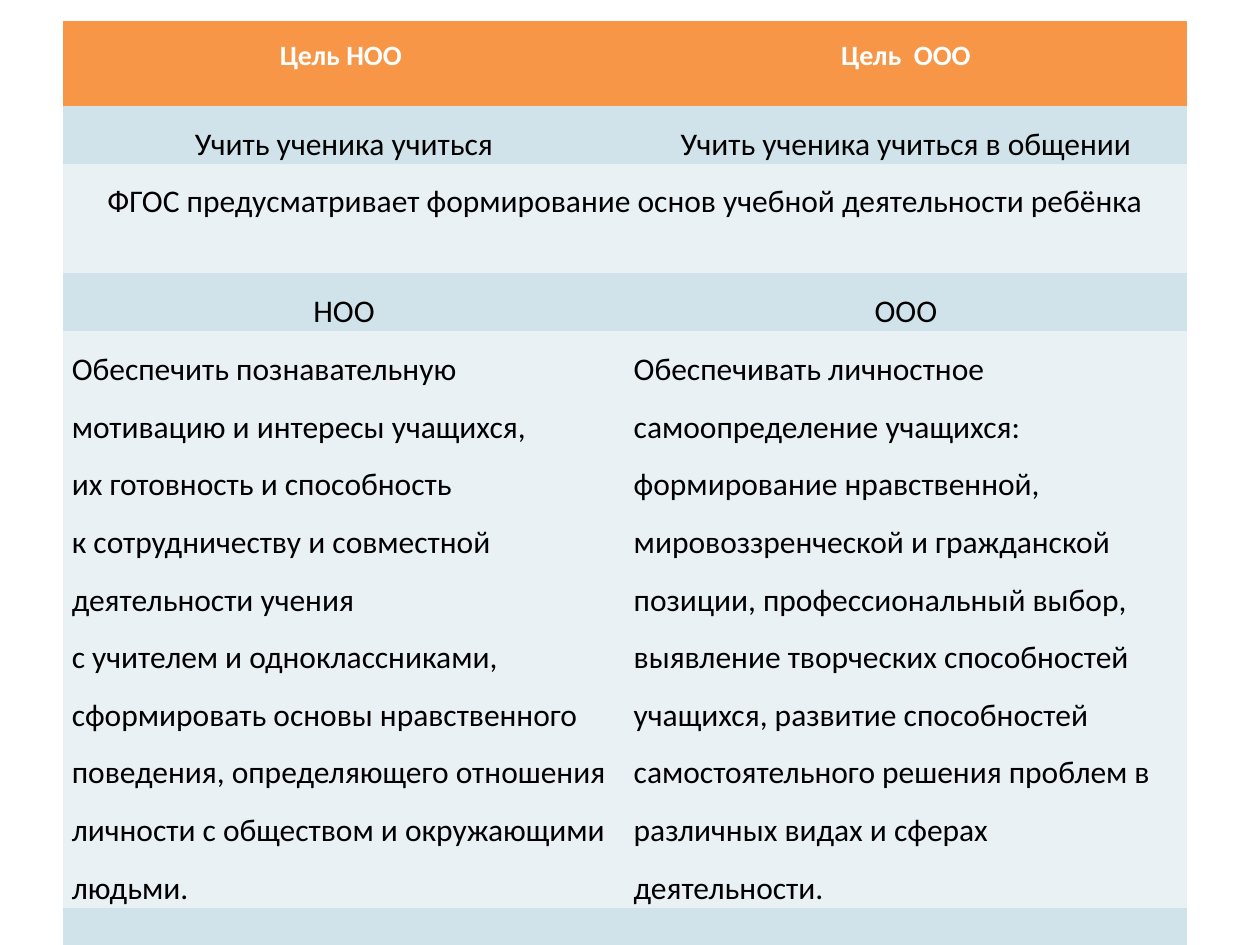
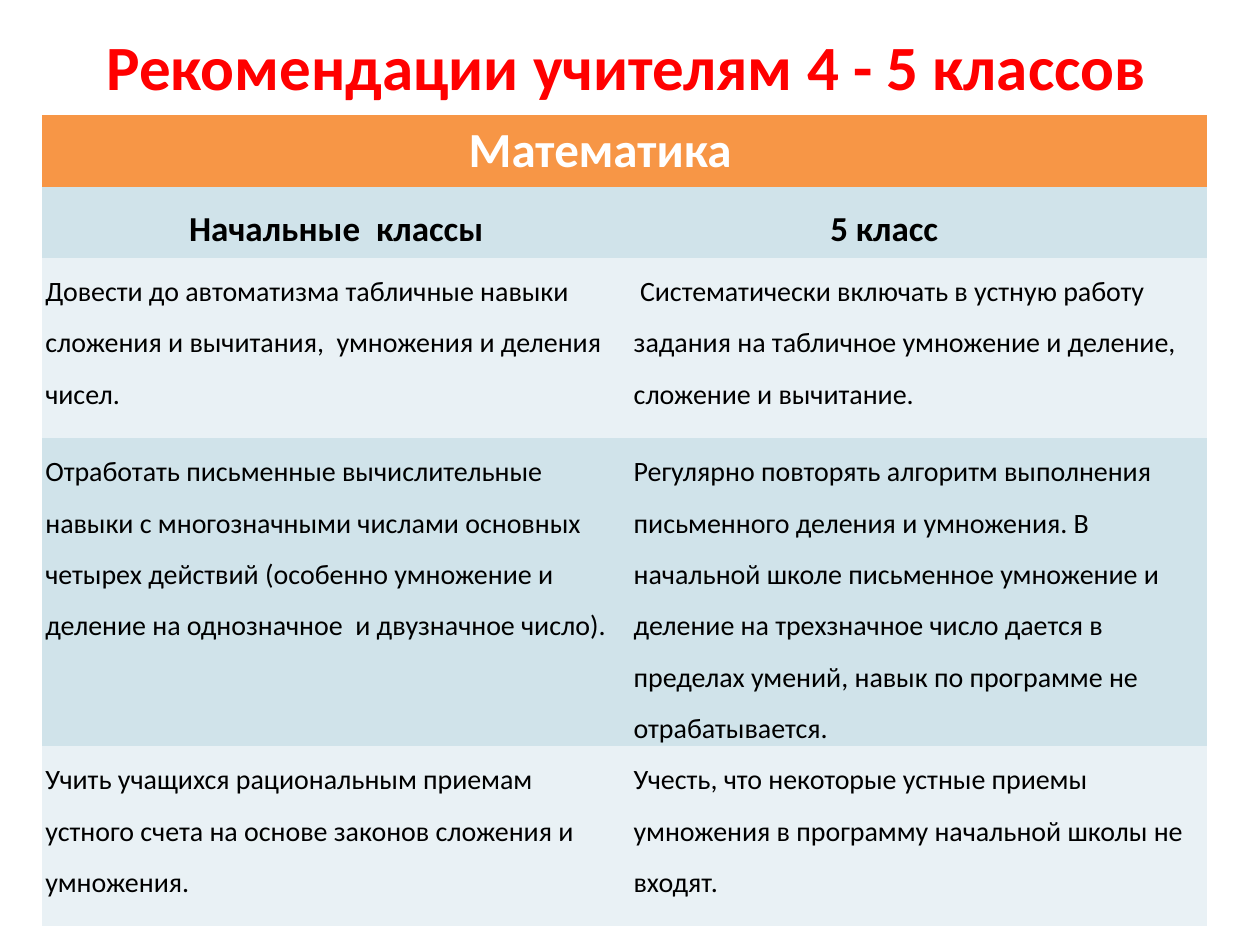
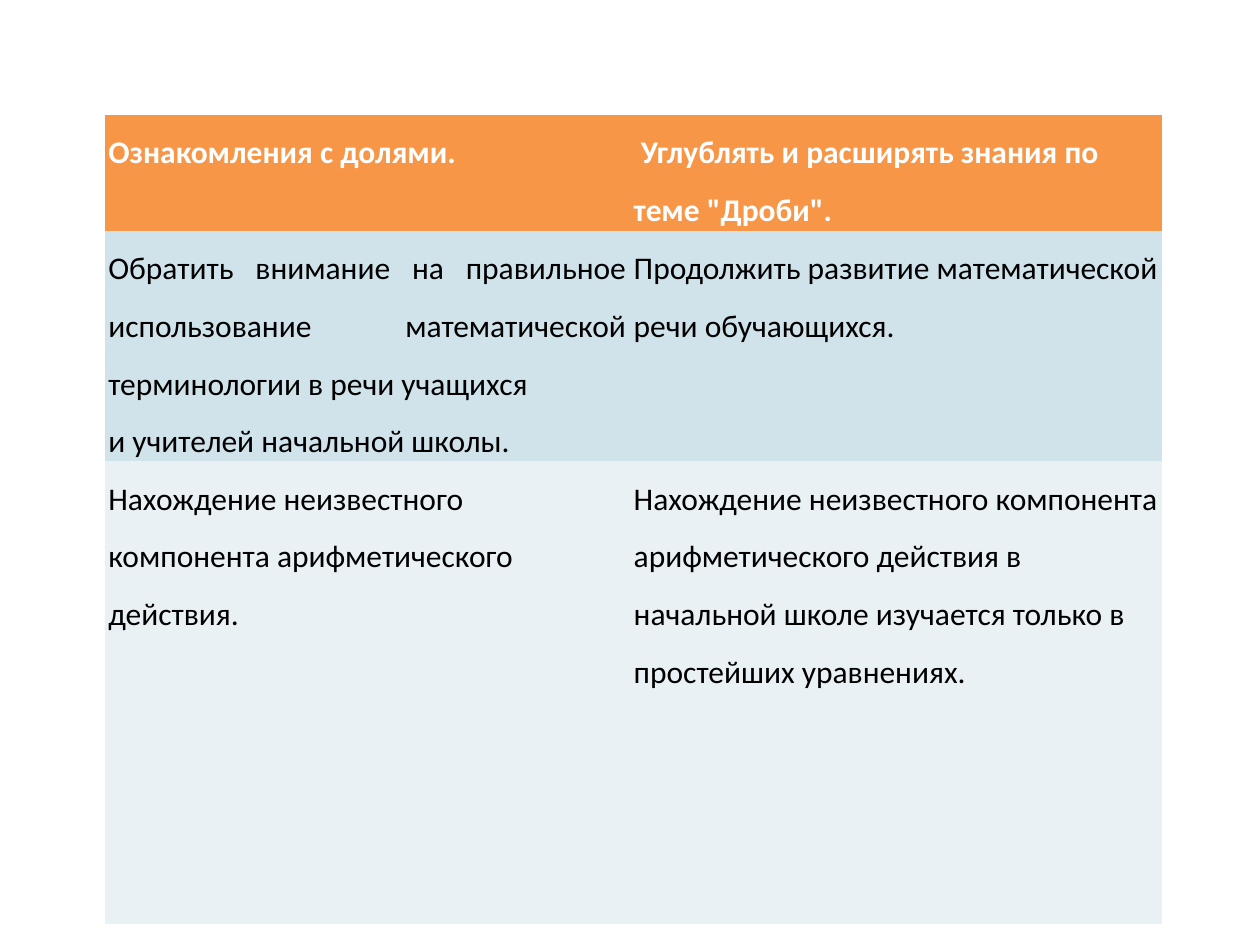
"""Build three slides on teaching goals and advice for grades 4 and 5."""
from dataclasses import dataclass, field

from pptx import Presentation
from pptx.dml.color import RGBColor
from pptx.enum.text import MSO_ANCHOR, PP_ALIGN as Align
from pptx.util import Inches, Pt

COLORS = {
    "header": "F79646",
    "odd_band": "D0E3EA",
    "even_band": "E9F1F5",
    "header_text": "FFFFFF",
    "body_text": "000000",
    "title": "FF0000",
}
FONT = "Calibri"
TITLE_ONLY, BLANK = 5, 6
PLAIN_STYLE = "{2D5ABB26-0587-4C30-8999-92F81FD0307C}"


@dataclass
class Row:
    """A table row; a single text spans all columns, a pair is text with its own format."""
    height: float
    cells: list
    style: dict = field(default_factory=dict)
    insets: tuple = None


GOALS = [
    Row(0.67, ["Цель НОО ", "Цель  ООО"], {"size": 16, "align": Align.CENTER}),
    Row(0.46, ["Учить ученика учиться", "Учить ученика учиться в общении"],
        {"align": Align.CENTER}),
    Row(0.87, ["ФГОС предусматривает формирование основ учебной деятельности ребёнка"],
        {"align": Align.CENTER}),
    Row(0.46, ["НОО", "ООО"], {"align": Align.CENTER}),
    Row(4.58, [
        "Обеспечить познавательную мотивацию и интересы учащихся,\n"
        "их готовность и способность\n"
        "к сотрудничеству и совместной деятельности учения\n"
        "с учителем и одноклассниками, сформировать основы нравственного поведения, "
        "определяющего отношения личности с обществом и окружающими людьми.",
        "Обеспечивать личностное самоопределение учащихся:  формирование нравственной, "
        "мировоззренческой и гражданской позиции, профессиональный выбор, выявление "
        "творческих способностей учащихся, развитие способностей самостоятельного "
        "решения проблем в различных видах и сферах деятельности."]),
    Row(0.37, ["", ""]),
]

MATHS = [
    Row(0.57, ["Математика"], {"size": 28, "indent": 3.29, "spacing": 1}, (0.1, 0.05)),
    Row(0.56, [("Начальные  классы", {"indent": 1.14}), ("5 класс", {"indent": 1.56})],
        {"size": 20, "bold": True}),
    Row(1.43, [
        "Довести до автоматизма табличные навыки сложения и вычитания,  умножения "
        "и деления чисел.",
        " Систематически включать в устную работу задания на табличное умножение "
        "и деление, сложение и вычитание."], {"size": 16}),
    Row(2.44, [
        "Отработать письменные вычислительные навыки с многозначными числами основных "
        "четырех действий (особенно умножение и деление на однозначное  и двузначное "
        "число).",
        "Регулярно повторять алгоритм выполнения письменного деления и умножения. "
        "В начальной школе письменное умножение и деление на трехзначное число дается "
        "в пределах умений, навык по программе не отрабатывается."], {"size": 16}),
    Row(1.43, [
        "Учить учащихся рациональным приемам устного счета на основе законов сложения "
        "и умножения.",
        "Учесть, что некоторые устные приемы умножения в программу начальной школы "
        "не входят."], {"size": 16}),
]

FRACTIONS = [
    Row(0.92, ["Ознакомления с долями.",
               " Углублять и расширять знания по теме \"Дроби\"."]),
    Row(1.83, [
        ("Обратить внимание на правильное использование математической терминологии "
         "в речи учащихся \nи учителей начальной школы.", {"align": Align.JUSTIFY}),
        "Продолжить развитие математической речи обучающихся."]),
    Row(3.67, [
        "Нахождение неизвестного компонента арифметического действия.",
        "Нахождение неизвестного компонента арифметического действия в начальной школе "
        "изучается только в простейших уравнениях."]),
]


def rgb(name):
    """Return the named palette colour."""
    return RGBColor.from_string(COLORS[name])


def write(frame, text, size=18, color="body_text", bold=False,
          align=Align.LEFT, spacing=1.5, indent=0):
    """Fill a text frame, one paragraph for each line of text."""
    for index, line in enumerate(text.split("\n")):
        paragraph = frame.add_paragraph() if index else frame.paragraphs[0]
        paragraph.alignment = align
        paragraph.line_spacing = spacing
        if indent:
            paragraph._p.get_or_add_pPr().set("marL", str(Inches(indent)))
        if line:
            run = paragraph.add_run()
            run.text = line
            run.font.name = FONT
            run.font.size = Pt(size)
            run.font.bold = bold
            run.font.color.rgb = rgb(color)


def add_title(slide, text):
    """Place the red heading in the title placeholder."""
    heading = slide.shapes.title
    heading.left, heading.top = Inches(0.47), Inches(0.27)
    heading.width, heading.height = Inches(9), Inches(0.5)
    heading.text_frame.vertical_anchor = MSO_ANCHOR.MIDDLE
    write(heading.text_frame, text, size=36, color="title", bold=True,
          align=Align.CENTER, spacing=1)


def fill_cell(cell, content, band, style, insets):
    """Colour a cell and write its text."""
    text, own_style = content if isinstance(content, tuple) else (content, {})
    side, edge = insets
    cell.margin_left = cell.margin_right = Inches(side)
    cell.margin_top = cell.margin_bottom = Inches(edge)
    cell.fill.solid()
    cell.fill.fore_color.rgb = rgb(band)
    write(cell.text_frame, text, **{**style, **own_style})


def add_banded_table(slide, left, top, widths, rows, insets):
    """Add a table with an orange header and alternating blue bands."""
    table = slide.shapes.add_table(
        len(rows), len(widths), Inches(left), Inches(top),
        Inches(sum(widths)), Inches(sum(row.height for row in rows))).table
    table._tbl.tblPr[0].text = PLAIN_STYLE
    for column, width in zip(table.columns, widths):
        column.width = Inches(width)
    for number, row in enumerate(rows):
        table.rows[number].height = Inches(row.height)
        if number == 0:
            band, base = "header", {"color": "header_text", "bold": True}
        else:
            band, base = ("odd_band" if number % 2 else "even_band"), {}
        if len(row.cells) == 1:
            table.cell(number, 0).merge(table.cell(number, len(widths) - 1))
        for position, content in enumerate(row.cells):
            fill_cell(table.cell(number, position), content, band,
                      {**base, **row.style}, row.insets or insets)


def main():
    """Build and save the slides."""
    deck = Presentation()
    deck.slide_width, deck.slide_height = Inches(10), Inches(7.5)

    goals = deck.slides.add_slide(deck.slide_layouts[BLANK])
    add_banded_table(goals, 0.5, 0.17, (4.46, 4.46), GOALS, (0.07, 0))

    maths = deck.slides.add_slide(deck.slide_layouts[TITLE_ONLY])
    add_title(maths, "Рекомендации учителям 4 - 5 классов")
    add_banded_table(maths, 0.33, 0.91, (4.67, 4.58), MATHS, (0.03, 0))

    fractions = deck.slides.add_slide(deck.slide_layouts[BLANK])
    add_banded_table(fractions, 0.83, 0.91, (4.17, 4.22), FRACTIONS, (0.03, 0))

    deck.save("out.pptx")


if __name__ == "__main__":
    main()
